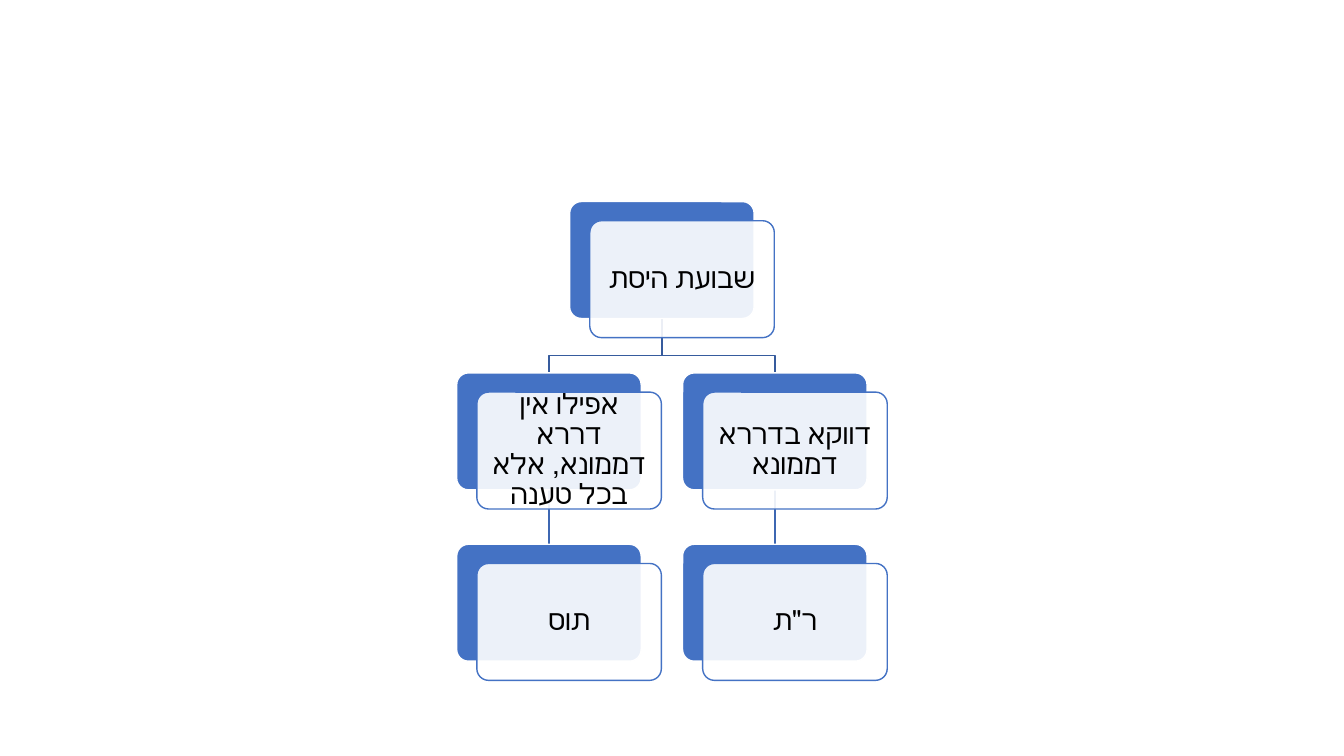
import pptx
import pptx.dml.color
import pptx.enum.shapes
import pptx.enum.text
import pptx.oxml
import pptx.oxml.ns
import pptx.util
from dataclasses import dataclass

Inches = pptx.util.Inches


@dataclass(frozen=True)
class Theme:
    accent: str = "4472C4"
    surface: str = "FFFFFF"
    surface_alpha: int = 90000
    ink: str = "000000"
    branch: str = "365B9D"
    stem: str = "3E67B2"
    font: str = "Calibri"
    hebrew_font: str = "+mn-cs"
    text_size: int = 20
    line_width: int = 1


THEME = Theme()

# Grid of the tree: columns and rows count from the lower left branch and the root.
LEFT, TOP = 4.53, 2
COLUMN_STEP, ROW_STEP = 2.24, 1.7
CARD_WIDTH, CARD_HEIGHT = 1.83, 1.16
FRONT_SHIFT = 0.2, 0.19
INSET = 0.08

# name: (column, row, text)
NODES = {
    "root": (0.5, 0, "שבועת היסת"),
    "narrow": (1, 1, "דווקא בדררא דממונא"),
    "narrow_source": (1, 2, 'ר"ת'),
    "broad": (0, 1, "אפילו אין דררא דממונא, אלא בכל טענה"),
    "broad_source": (0, 2, "תוס"),
}
BRANCHES = [("root", "narrow"), ("root", "broad")]
STEMS = [("narrow", "narrow_source"), ("broad", "broad_source")]


def colour(value):
    return pptx.dml.color.RGBColor.from_string(value)


def set_all(target, values):
    for name, value in values.items():
        setattr(target, name, value)


def style_line(line, value):
    line.color.rgb = colour(value)
    line.width = pptx.util.Pt(THEME.line_width)


def add_card(page, left, top, fill, line):
    card = page.shapes.add_shape(
        pptx.enum.shapes.MSO_SHAPE.ROUNDED_RECTANGLE,
        Inches(left), Inches(top), Inches(CARD_WIDTH), Inches(CARD_HEIGHT))
    card.adjustments[0] = 0.1
    card.shadow.inherit = False
    card.fill.solid()
    card.fill.fore_color.rgb = colour(fill)
    style_line(card.line, line)
    return card


def make_translucent(card):
    fill_colour = card.fill._xPr.find(".//" + pptx.oxml.ns.qn("a:srgbClr"))
    alpha = pptx.oxml.parse_xml(
        f'<a:alpha {pptx.oxml.ns.nsdecls("a")} val="{THEME.surface_alpha}"/>')
    fill_colour.append(alpha)


def write_text(card, text):
    """Fill the card with one centred right-to-left paragraph."""
    frame = card.text_frame
    set_all(frame, {
        "word_wrap": True,
        "vertical_anchor": pptx.enum.text.MSO_ANCHOR.MIDDLE,
        **{f"margin_{side}": Inches(INSET) for side in ("left", "top", "right", "bottom")},
    })
    para = frame.paragraphs[0]
    set_all(para, {"alignment": pptx.enum.text.PP_ALIGN.CENTER, "line_spacing": 0.9})
    para._p.get_or_add_pPr().set("rtl", "1")
    span = para.add_run()
    span.text = text
    set_all(span.font, {"name": THEME.font, "size": pptx.util.Pt(THEME.text_size)})
    span.font.color.rgb = colour(THEME.ink)
    complex_script = pptx.oxml.parse_xml(
        f'<a:cs {pptx.oxml.ns.nsdecls("a")} typeface="{THEME.hebrew_font}"/>')
    span.font._element.append(complex_script)


def add_node(page, column, row, text):
    """Draw a solid card with a translucent text card over it; return the solid one."""
    left, top = LEFT + column * COLUMN_STEP, TOP + row * ROW_STEP
    back = add_card(page, left, top, THEME.accent, THEME.surface)
    front = add_card(page, left + FRONT_SHIFT[0], top + FRONT_SHIFT[1],
                     THEME.surface, THEME.accent)
    make_translucent(front)
    write_text(front, text)
    return back


def send_to_back(page, shape):
    page.shapes._spTree.insert(2, shape._element)


def add_stem(page, parent, child):
    """Join two cards of one column with a straight line."""
    stem = page.shapes.add_connector(
        pptx.enum.shapes.MSO_CONNECTOR.STRAIGHT, 0, 0, 0, 0)
    stem.begin_connect(parent, 2)
    stem.end_connect(child, 0)
    style_line(stem.line, THEME.stem)
    stem._element.spPr.append(
        pptx.oxml.parse_xml(f'<a:effectLst {pptx.oxml.ns.nsdecls("a")}/>'))
    send_to_back(page, stem)


def add_branch(page, parent, child):
    """Lead from a parent down, across and down to a child of another column."""
    start_x, end_x = (card.left + card.width // 2 for card in (parent, child))
    start_y, end_y = parent.top + parent.height, child.top
    bend_y = start_y + (end_y - start_y) * 0.68
    builder = page.shapes.build_freeform(start_x, start_y)
    builder.add_line_segments(
        [(start_x, bend_y), (end_x, bend_y), (end_x, end_y)], close=False)
    branch = builder.convert_to_shape()
    branch.shadow.inherit = False
    branch.fill.background()
    style_line(branch.line, THEME.branch)
    send_to_back(page, branch)


def main():
    deck = pptx.Presentation()
    set_all(deck, {"slide_width": Inches(13.33), "slide_height": Inches(7.5)})
    page = deck.slides.add_slide(deck.slide_layouts.get_by_name("Blank"))
    cards = {name: add_node(page, *node) for name, node in NODES.items()}
    for parent, child in BRANCHES:
        add_branch(page, cards[parent], cards[child])
    for parent, child in STEMS:
        add_stem(page, cards[parent], cards[child])
    deck.save("out.pptx")


if __name__ == "__main__":
    main()
